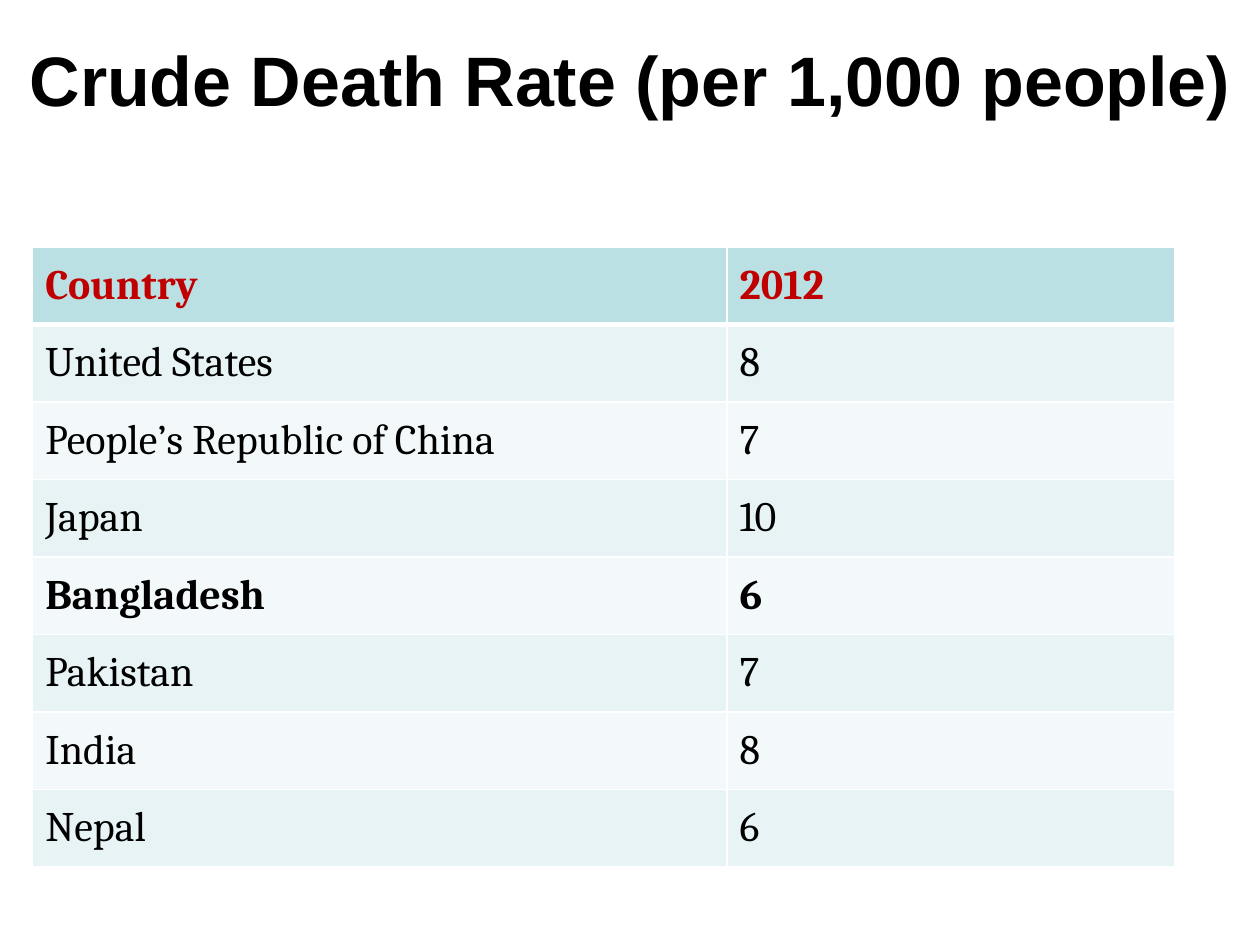
import pptx
import pptx.util
import pptx.dml.color
import pptx.enum.text
import pptx.oxml
import pptx.oxml.ns

Inches = pptx.util.Inches
Pt = pptx.util.Pt
MID = pptx.enum.text.MSO_ANCHOR.MIDDLE
MID_ROW = pptx.enum.text.PP_ALIGN.CENTER

TITLE = "Crude Death Rate (per 1,000 people)"
ROWS = [
    ("Country", "2012"),
    ("United States", "8"),
    ("People’s Republic of China", "7"),
    ("Japan", "10"),
    ("Bangladesh", "6"),
    ("Pakistan", "7"),
    ("India", "8"),
    ("Nepal", "6"),
]
COLS = [5.51, 3.55]
HIGH = 4.92
BANDS = ["F3F9FA", "E7F3F4"]
HEAD = "BBE0E3"
EDGE = "FFFFFF"
BIG = {"name": "Arial", "size": Pt(40), "bold": True}
TOP = {"name": "Cambria", "size": Pt(24), "bold": True}
BODY = {**TOP, "bold": False}
STRONG = "Bangladesh"


def paint(form, code):
    form.rgb = pptx.dml.color.RGBColor.from_string(code)


def write(frame, text, form, code):
    para = frame.paragraphs[0]
    run = para.add_run()
    run.text = text
    for key, val in form.items():
        setattr(run.font, key, val)
    paint(run.font.color, code)
    return para


def rule(cell, side, wide):
    cell._tc.get_or_add_tcPr().append(pptx.oxml.parse_xml(
        f'<a:ln{side} {pptx.oxml.ns.nsdecls("a")} w="{Pt(wide)}">'
        f'<a:solidFill><a:srgbClr val="{EDGE}"/></a:solidFill></a:ln{side}>'))


def add_title(slide):
    box = slide.shapes.add_textbox(0, 0, Inches(10), Inches(1.25))
    frame = box.text_frame
    frame.word_wrap = True
    frame.vertical_anchor = MID
    write(frame, TITLE, BIG, "000000").alignment = MID_ROW


def add_rates(slide):
    grid = slide.shapes.add_table(
        len(ROWS), len(COLS), Inches(0.26), Inches(1.96),
        Inches(sum(COLS)), Inches(HIGH)).table
    for col, wide in zip(grid.columns, COLS):
        col.width = Inches(wide)
    for r, row in enumerate(ROWS):
        head = r == 0
        form = TOP if head or row[0] == STRONG else BODY
        for c, text in enumerate(row):
            cell = grid.cell(r, c)
            cell.vertical_anchor = MID
            write(cell.text_frame, text, form, "C00000" if head else "000000")
            sides = {"L": 1, "R": 1, "T": 3 if r == 1 else 1, "B": 3 if head else 1}
            for side, wide in sides.items():
                rule(cell, side, wide)
            cell.fill.solid()
            paint(cell.fill.fore_color, HEAD if head else BANDS[r % 2])


def main():
    deck = pptx.Presentation()
    deck.slide_width = Inches(10)
    deck.slide_height = Inches(7.5)
    slide = deck.slides.add_slide(deck.slide_layouts[6])
    add_title(slide)
    add_rates(slide)
    deck.save("out.pptx")


if __name__ == "__main__":
    main()
